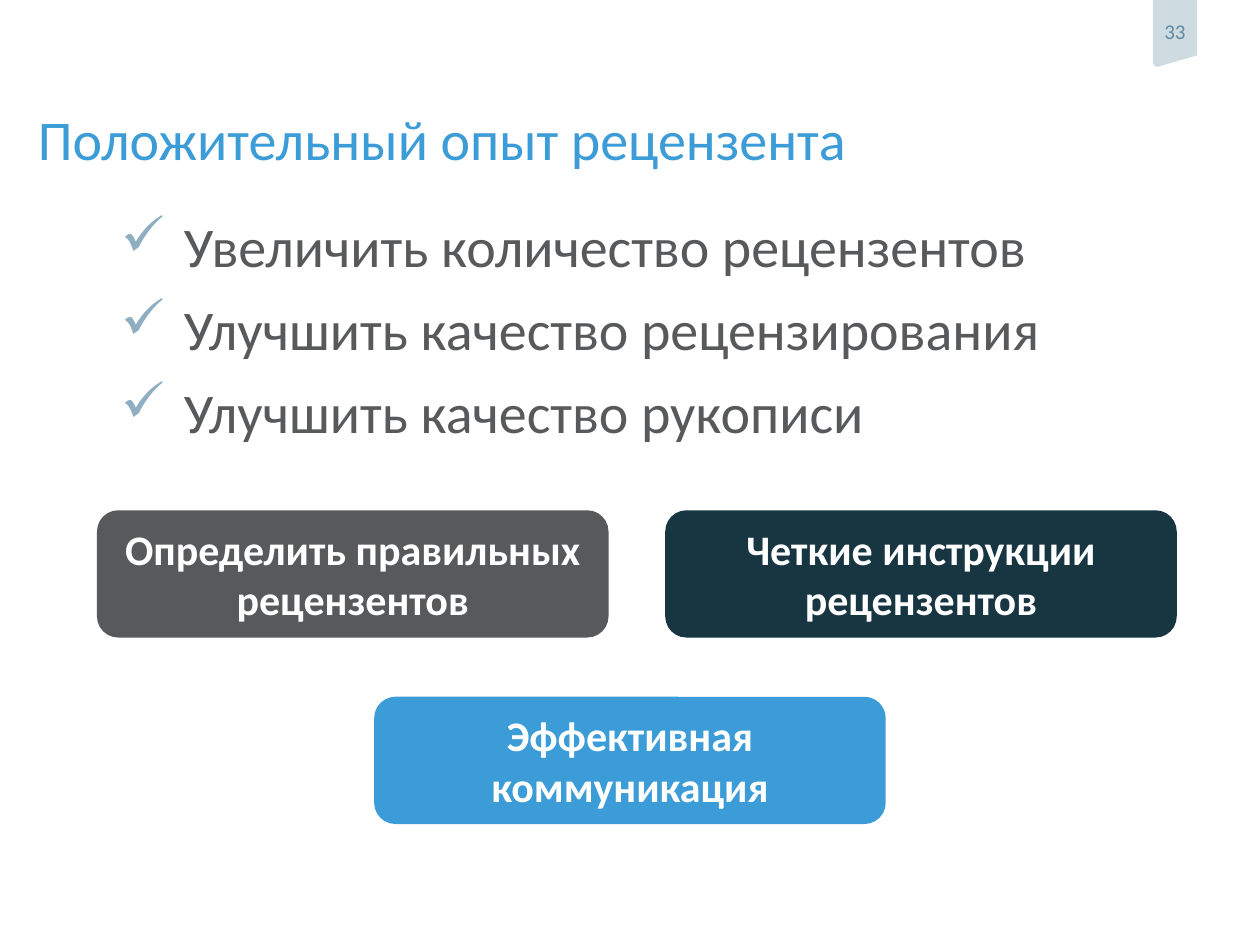
from lxml import etree
from pptx import Presentation
from pptx.dml.color import RGBColor
from pptx.enum.shapes import MSO_SHAPE
from pptx.enum.text import MSO_ANCHOR, PP_ALIGN
from pptx.oxml.ns import qn
from pptx.util import Inches, Pt

FONT = "Calibri"
WHITE = RGBColor(0xFF, 0xFF, 0xFF)
BLUE = RGBColor(0x3C, 0x9C, 0xD7)
GRAY = RGBColor(0x58, 0x59, 0x5B)
NAVY = RGBColor(0x18, 0x36, 0x42)
TAB_FILL = RGBColor(0xCE, 0xDB, 0xE0)
TAB_TEXT = RGBColor(0x60, 0x8B, 0xA3)
CHECK_COLOR = RGBColor(0x8F, 0xAE, 0xC1)

GOALS = [
    "Увеличить количество рецензентов",
    "Улучшить качество рецензирования",
    "Улучшить качество рукописи",
]
CARD_WIDTH, CARD_HEIGHT = 4.06, 1.01
CARDS = [
    (0.77, 4.05, "Определить правильных рецензентов", GRAY),
    (5.28, 4.05, "Четкие инструкции рецензентов", NAVY),
    (2.97, 5.53, "Эффективная коммуникация", BLUE),
]


def style_paragraph(paragraph, size, color, bold=False):
    for run in paragraph.runs:
        run.font.name = FONT
        run.font.size = Pt(size)
        run.font.bold = bold
        run.font.color.rgb = color


def set_margins(text_frame, bottom=0):
    text_frame.margin_left = text_frame.margin_right = text_frame.margin_top = 0
    text_frame.margin_bottom = Inches(bottom)


def fill_plain(shape, color):
    shape.shadow.inherit = False
    shape.fill.solid()
    shape.fill.fore_color.rgb = color
    shape.line.fill.background()


def add_text_box(slide, left, top, width, height):
    box = slide.shapes.add_textbox(Inches(left), Inches(top), Inches(width), Inches(height))
    box.text_frame.word_wrap = True
    set_margins(box.text_frame)
    return box.text_frame


def add_check_bullet(paragraph, indent):
    properties = paragraph._p.get_or_add_pPr()
    properties.set("marL", str(Inches(indent)))
    properties.set("indent", str(-Inches(indent)))
    color = etree.SubElement(properties, qn("a:buClr"))
    etree.SubElement(color, qn("a:srgbClr")).set("val", str(CHECK_COLOR))
    etree.SubElement(properties, qn("a:buChar")).set("char", "✓")


def add_page_tab(slide, left, top, width, height, number):
    # Ribbon with a slanted lower edge and a softened lower left corner
    outline = [(width, 0), (width, height - 0.09), (0.04, height),
               (0.02, height), (0, height - 0.03)]
    builder = slide.shapes.build_freeform(Inches(left), Inches(top), scale=1.0)
    builder.add_line_segments(
        [(Inches(left + x), Inches(top + y)) for x, y in outline], close=True)
    tab = builder.convert_to_shape()
    fill_plain(tab, TAB_FILL)
    text_frame = tab.text_frame
    text_frame.word_wrap = False
    set_margins(text_frame, bottom=0.04)
    text_frame.vertical_anchor = MSO_ANCHOR.MIDDLE
    text_frame.text = number
    text_frame.paragraphs[0].alignment = PP_ALIGN.CENTER
    style_paragraph(text_frame.paragraphs[0], 12, TAB_TEXT)


def add_title(slide, left, top, width, height, text):
    text_frame = add_text_box(slide, left, top, width, height)
    text_frame.text = text
    style_paragraph(text_frame.paragraphs[0], 32, BLUE)


def add_checklist(slide, left, top, width, height, items):
    text_frame = add_text_box(slide, left, top, width, height)
    text_frame.text = "\n".join(items)
    for index, paragraph in enumerate(text_frame.paragraphs):
        if index:
            paragraph.space_before = Pt(9)
        add_check_bullet(paragraph, 0.5)
        style_paragraph(paragraph, 32, GRAY)


def add_card(slide, left, top, width, height, text, color):
    card = slide.shapes.add_shape(
        MSO_SHAPE.ROUNDED_RECTANGLE,
        Inches(left), Inches(top), Inches(width), Inches(height))
    fill_plain(card, color)
    text_frame = card.text_frame
    text_frame.word_wrap = True
    text_frame.vertical_anchor = MSO_ANCHOR.MIDDLE
    text_frame.text = text
    text_frame.paragraphs[0].alignment = PP_ALIGN.CENTER
    style_paragraph(text_frame.paragraphs[0], 24, WHITE, bold=True)


def main():
    presentation = Presentation()
    presentation.slide_width = Inches(10)
    presentation.slide_height = Inches(7.5)
    slide = presentation.slides.add_slide(presentation.slide_layouts[6])

    add_page_tab(slide, 9.15, 0, 0.35, 0.53, "33")
    add_title(slide, 0.3, 0.83, 8.74, 0.48, "Положительный опыт рецензента")
    add_checklist(slide, 0.96, 1.68, 8.17, 2.26, GOALS)
    for left, top, text, color in CARDS:
        add_card(slide, left, top, CARD_WIDTH, CARD_HEIGHT, text, color)

    presentation.save("out.pptx")


if __name__ == "__main__":
    main()
